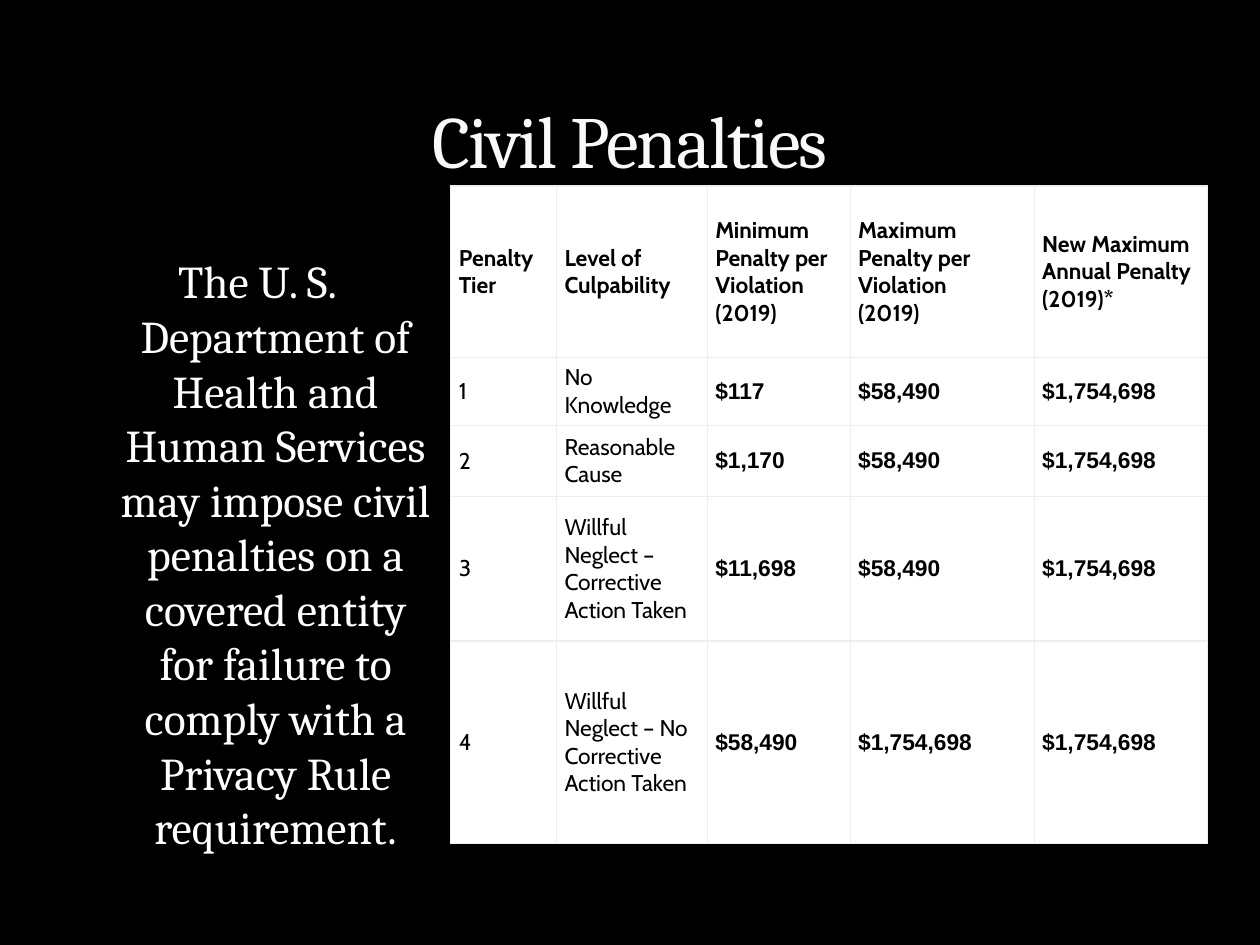
from dataclasses import dataclass

from lxml.etree import SubElement
from pptx import Presentation
from pptx.dml.color import RGBColor
from pptx.enum.text import MSO_ANCHOR, PP_ALIGN
from pptx.oxml import parse_xml
from pptx.oxml.ns import nsdecls, qn
from pptx.util import Cm, Pt

HEADING = {"name": "Cabin", "size": Pt(13), "bold": True}
LABEL = {"name": "Cabin", "size": Pt(13), "bold": False}
AMOUNT = {"name": "Arial", "size": Pt(13), "bold": True}
CELL = {
    "vertical_anchor": MSO_ANCHOR.MIDDLE,
    "margin_left": Cm(0.16),
    "margin_right": Cm(0.16),
    "margin_top": Cm(0.13),
    "margin_bottom": Cm(0.13),
}
COLUMNS = (2.13, 3.04, 2.88, 3.71, 3.5)
ROWS = (3.46, 1.3, 1.44, 2.91, 4.08)
PENALTIES = (
    (
        "Penalty Tier",
        "Level of Culpability",
        "Minimum Penalty per Violation\n(2019)",
        "Maximum Penalty per Violation\n(2019)",
        "New Maximum Annual Penalty\n(2019)*",
    ),
    ("1", "No Knowledge", "$117", "$58,490", "$1,754,698"),
    ("2", "Reasonable Cause", "$1,170", "$58,490", "$1,754,698"),
    ("3", "Willful Neglect – Corrective Action Taken", "$11,698", "$58,490", "$1,754,698"),
    ("4", "Willful Neglect – No Corrective Action Taken", "$58,490", "$1,754,698", "$1,754,698"),
)


@dataclass
class TextBlock:
    text: str
    left: float
    top: float
    width: float
    height: float
    size: int
    color: str
    frame: dict


TITLE = TextBlock(
    "Civil Penalties", 1.27, 0.43, 22.86, 3.38, 42, "F9F9F9",
    {"word_wrap": True, "vertical_anchor": MSO_ANCHOR.BOTTOM},
)
BODY = TextBlock(
    "The U. S. Department of Health and Human Services may impose civil penalties "
    "on a covered entity for failure to comply with a Privacy Rule requirement.",
    1.27, 3.61, 7.82, 13.34, 26, "FFFFFF",
    {"word_wrap": True, "vertical_anchor": MSO_ANCHOR.TOP, "margin_top": Cm(1.5)},
)


def apply(target, values: dict) -> None:
    for name, value in values.items():
        setattr(target, name, value)


def paint(color_format, color: str) -> None:
    color_format.rgb = RGBColor.from_string(color)


def fill_solid(fill, color: str) -> None:
    fill.solid()
    paint(fill.fore_color, color)


def write(tf, text: str, font: dict, color: str) -> None:
    for i, line in enumerate(text.split("\n")):
        p = tf.paragraphs[0] if i == 0 else tf.add_paragraph()
        r = p.add_run()
        r.text = line
        apply(r.font, font)
        paint(r.font.color, color)


def add_text(s, block: TextBlock):
    sp = s.shapes.add_textbox(
        Cm(block.left), Cm(block.top), Cm(block.width), Cm(block.height)
    )
    tf = sp.text_frame
    apply(tf, block.frame)
    write(tf, block.text, {"name": "Cambria", "size": Pt(block.size)}, block.color)
    p = tf.paragraphs[0]
    p.alignment = PP_ALIGN.CENTER
    return p


def outline_title(p) -> None:
    props = p.runs[0].font._element
    props.set("spc", "-100")
    props.insert(0, parse_xml(
        f'<a:ln {nsdecls("a")} w="3175"><a:solidFill><a:srgbClr val="3C4422">'
        '<a:alpha val="25000"/></a:srgbClr></a:solidFill></a:ln>'
    ))


def hang_first_line(p) -> None:
    props = p._p.get_or_add_pPr()
    props.set("marL", str(Cm(0.76)))
    props.set("indent", str(-Cm(0.76)))
    SubElement(props, qn("a:buNone"))


def add_borders(cell, color: str) -> None:
    props = cell._tc.get_or_add_tcPr()
    for i, side in enumerate(("lnL", "lnR", "lnT", "lnB")):
        props.insert(i, parse_xml(
            f'<a:{side} {nsdecls("a")} w="{Pt(0.75)}"><a:solidFill>'
            f'<a:srgbClr val="{color}"/></a:solidFill></a:{side}>'
        ))


def add_penalty_table(s) -> None:
    table = s.shapes.add_table(
        len(ROWS), len(COLUMNS), Cm(9.09), Cm(3.75), Cm(sum(COLUMNS)), Cm(sum(ROWS))
    ).table
    for column, width in zip(table.columns, COLUMNS):
        column.width = Cm(width)
    for row, height in zip(table.rows, ROWS):
        row.height = Cm(height)
    for i, texts in enumerate(PENALTIES):
        for j, text in enumerate(texts):
            cell = table.cell(i, j)
            apply(cell, CELL)
            fill_solid(cell.fill, "FFFFFF")
            add_borders(cell, "EEEEEE")
            font = HEADING if i == 0 else LABEL if j < 2 else AMOUNT
            write(cell.text_frame, text, font, "000000")


def main() -> None:
    prs = Presentation()
    prs.slide_width, prs.slide_height = Cm(25.4), Cm(19.05)
    s = prs.slides.add_slide(prs.slide_layouts[6])
    fill_solid(s.background.fill, "000000")
    hang_first_line(add_text(s, BODY))
    outline_title(add_text(s, TITLE))
    add_penalty_table(s)
    prs.save("out.pptx")


if __name__ == "__main__":
    main()
